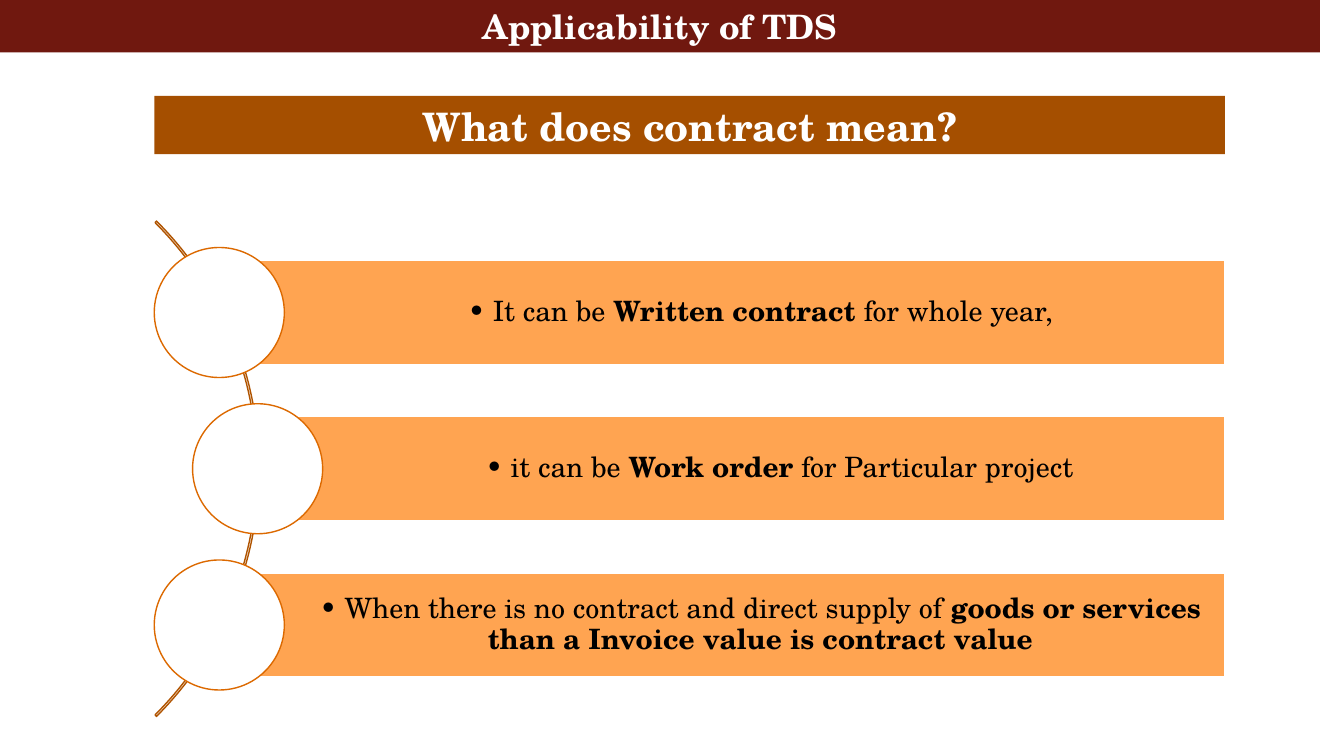
from pptx import Presentation
from pptx.dml.color import RGBColor
from pptx.enum.shapes import MSO_SHAPE
from pptx.enum.text import MSO_ANCHOR, MSO_AUTO_SIZE, PP_ALIGN
from pptx.util import Inches, Pt

TITLE = "Applicability of TDS"
QUESTION = "What does contract mean?"
ANSWERS = [
    [("• It can be ", False), ("Written contract ", True), ("for whole year,", False)],
    [("• it can be ", False), ("Work order ", True), ("for Particular project", False)],
    [("• When there is no contract and direct supply of ", False),
     ("goods or services than a Invoice value is contract value", True)],
]
COLORS = {"title": "70180F", "question": "A54F00", "bar": "FFA451", "ring": "DC6900",
          "arc": "B05400", "white": "FFFFFF", "black": "000000"}
FONT = "TeX Gyre Schola"

WIDTH, HEIGHT = 13.33, 7.5
LEFT, RIGHT = 1.53, 12.15
MIDDLE, PITCH = 4.65, 1.55
CIRCLE, BAR, BULGE = 1.29, 1.03, 0.38
ARC, ARC_LEFT = 6.95, -4.38


def rgb(name):
    return RGBColor.from_string(COLORS[name])


def paint(s, fill=None, line=None):
    if fill:
        s.fill.solid()
        s.fill.fore_color.rgb = rgb(fill)
    else:
        s.fill.background()
    if line:
        s.line.color.rgb = rgb(line)
        s.line.width = Pt(1)
    else:
        s.line.fill.background()


def add_shape(kind, x, y, w, h, fill=None, line=None):
    s = slide.shapes.add_shape(kind, Inches(x), Inches(y), Inches(w), Inches(h))
    s.shadow.inherit = False
    paint(s, fill, line)
    return s


def write(s, runs, size, color="white", anchor=MSO_ANCHOR.TOP, insets=(0, 0.06, 0, 0.06), spacing=1.0):
    tf = s.text_frame
    tf.word_wrap = True
    tf.auto_size = MSO_AUTO_SIZE.NONE
    tf.vertical_anchor = anchor
    tf.margin_left, tf.margin_top, tf.margin_right, tf.margin_bottom = map(Inches, insets)
    p = tf.paragraphs[0]
    p.alignment = PP_ALIGN.CENTER
    p.line_spacing = spacing
    p.space_before = Pt(0)
    for text, bold in runs:
        r = p.add_run()
        r.text = text
        r.font.name = FONT
        r.font.size = Pt(size)
        r.font.bold = bold
        r.font.color.rgb = rgb(color)


prs = Presentation()
prs.slide_width, prs.slide_height = Inches(WIDTH), Inches(HEIGHT)
slide = prs.slides.add_slide(prs.slide_layouts[5])

title = slide.shapes.title
title.left, title.top, title.width, title.height = map(Inches, (0, 0, 13.09, 0.52))
paint(title, "title")
write(title, [(TITLE, True)], 24)

question = add_shape(MSO_SHAPE.RECTANGLE, LEFT, 0.95, RIGHT - LEFT, 0.58, "question")
write(question, [(QUESTION, True)], 28)

arc = add_shape(MSO_SHAPE.BLOCK_ARC, ARC_LEFT, MIDDLE - ARC / 2, ARC, ARC, line="arc")
for i, value in enumerate((189, 27, 0.003)):
    arc.adjustments[i] = value

for i, runs in enumerate(ANSWERS):
    step = i - len(ANSWERS) // 2
    y = MIDDLE + step * PITCH
    x = LEFT + (0 if step else BULGE)
    bar_x = x + CIRCLE / 2
    bar = add_shape(MSO_SHAPE.RECTANGLE, bar_x, y - BAR / 2, RIGHT - bar_x, BAR, "bar", "white")
    write(bar, runs, 20, "black", MSO_ANCHOR.MIDDLE, (0.82, 0.06, 0.06, 0.06), 0.9)
    add_shape(MSO_SHAPE.OVAL, x, y - CIRCLE / 2, CIRCLE, CIRCLE, "white", "ring")

prs.save("out.pptx")
